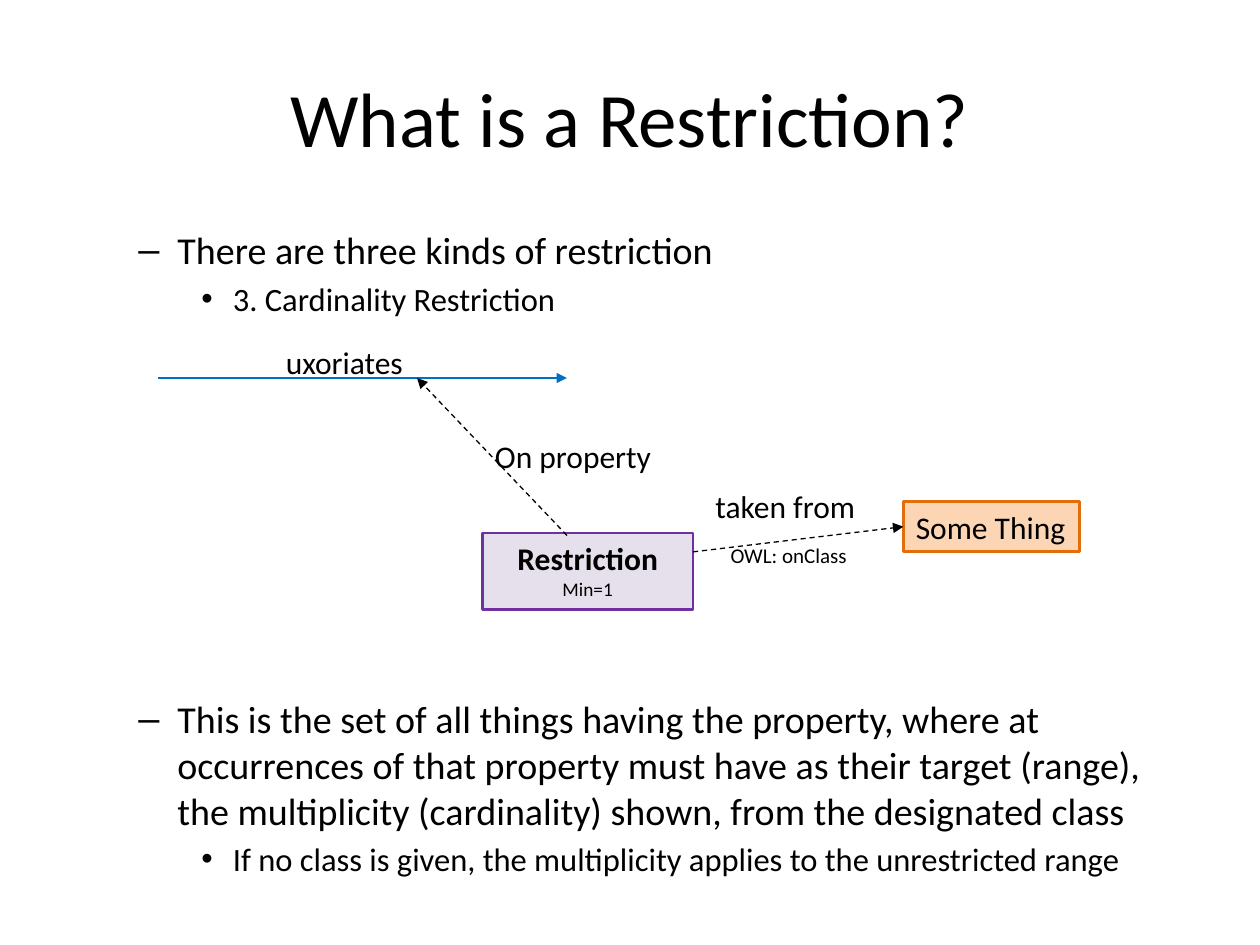
from lxml.etree import SubElement
from pptx import Presentation
from pptx.dml.color import RGBColor
from pptx.enum.dml import MSO_LINE
from pptx.enum.shapes import MSO_CONNECTOR, MSO_SHAPE
from pptx.enum.text import MSO_ANCHOR, MSO_AUTO_SIZE, PP_ALIGN
from pptx.oxml.ns import qn
from pptx.util import Emu, Pt

EMU_PER_PX = 9144


def px(length):
    return Emu(length * EMU_PER_PX)


def color(value):
    return RGBColor.from_string(value)


class SlideBuilder:
    font = "Calibri"
    ink = "000000"

    def __init__(self, presentation):
        self.slide = presentation.slides.add_slide(presentation.slide_layouts[5])

    def add_text(self, paragraph, text, size, bold=False, align=PP_ALIGN.LEFT):
        paragraph.alignment = align
        run = paragraph.add_run()
        run.text = text
        run.font.name = self.font
        run.font.size = Pt(size)
        run.font.bold = bold
        run.font.color.rgb = color(self.ink)

    def title(self, text, box):
        shape = self.slide.shapes.title
        shape.left, shape.top, shape.width, shape.height = map(px, box)
        shape.text_frame.vertical_anchor = MSO_ANCHOR.MIDDLE
        self.add_text(shape.text_frame.paragraphs[0], text, 44, align=PP_ALIGN.CENTER)

    def bullets(self, items, box):
        levels = {1: ("–", 21.7, 81, 31), 2: ("•", 18.6, 125, 25)}
        frame = self.slide.shapes.add_textbox(*map(px, box)).text_frame
        frame.word_wrap = True
        for index, (level, text, space_before) in enumerate(items):
            mark, size, margin, hanging = levels[level]
            paragraph = frame.add_paragraph() if index else frame.paragraphs[0]
            paragraph.level = level
            paragraph.space_before = Pt(space_before)
            properties = paragraph._p.get_or_add_pPr()
            properties.set("marL", str(px(margin)))
            properties.set("indent", str(-px(hanging)))
            SubElement(properties, qn("a:buFont"), typeface="Arial")
            SubElement(properties, qn("a:buChar"), char=mark)
            self.add_text(paragraph, text, size)

    def label(self, text, box, size=18):
        frame = self.slide.shapes.add_textbox(*map(px, box)).text_frame
        frame.word_wrap = False
        frame.auto_size = MSO_AUTO_SIZE.SHAPE_TO_FIT_TEXT
        self.add_text(frame.paragraphs[0], text, size)

    def node(self, lines, box, fill, outline, align=PP_ALIGN.LEFT, wrap=True):
        shape = self.slide.shapes.add_shape(MSO_SHAPE.RECTANGLE, *map(px, box))
        shape.shadow.inherit = False
        shape.fill.solid()
        shape.fill.fore_color.rgb = color(fill)
        shape.line.color.rgb = color(outline)
        shape.line.width = Pt(1.5)
        frame = shape.text_frame
        frame.word_wrap = wrap
        frame.auto_size = MSO_AUTO_SIZE.SHAPE_TO_FIT_TEXT
        frame.vertical_anchor = MSO_ANCHOR.TOP
        for index, (text, size, bold) in enumerate(lines):
            paragraph = frame.add_paragraph() if index else frame.paragraphs[0]
            self.add_text(paragraph, text, size, bold, align)
        return shape

    def arrow(self, start, end, line_color=ink, width=0.75, dashed=True):
        connector = self.slide.shapes.add_connector(
            MSO_CONNECTOR.STRAIGHT, *map(px, start + end))
        connector.line.color.rgb = color(line_color)
        connector.line.width = Pt(width)
        if dashed:
            connector.line.dash_style = MSO_LINE.DASH
        properties = connector._element.spPr
        SubElement(properties.find(qn("a:ln")), qn("a:tailEnd"), type="triangle")
        SubElement(properties, qn("a:effectLst"))
        return connector


def main():
    presentation = Presentation()
    presentation.slide_width, presentation.slide_height = px(1000), px(750)
    builder = SlideBuilder(presentation)

    builder.title("What is a Restriction?", (50, 30, 900, 125))
    builder.bullets([
        (1, "There are three kinds of restriction", 0),
        (2, "3. Cardinality Restriction", 3.7),
        (1, "This is the set of all things having the property, where at "
            "occurrences of that property must have as their target (range), "
            "the multiplicity (cardinality) shown, from the designated class", 216),
        (2, "If no class is given, the multiplicity applies to the "
            "unrestricted range", 3.7),
    ], (50, 175, 900, 495))

    builder.node([("Restriction", 18, True), ("Min=1", 11, False)],
                 (383, 423, 167, 61), "E6E0EC", "7030A0", PP_ALIGN.CENTER)
    some_thing = builder.node([("Some Thing", 18, False)], (717, 398, 140, 40),
                              "FCD5B5", "E46C0A", wrap=False)

    taken_from = builder.arrow((550, 438), (717, 418))
    taken_from.end_connect(some_thing, 1)
    builder.label("taken from", (558, 382, 132, 40))
    builder.label("OWL: onClass", (570, 426, 113, 30), 12)

    builder.arrow((125, 300), (450, 300), "0070C0", 1.5, dashed=False)
    builder.label("uxoriates", (217, 267, 114, 40))
    builder.arrow((450, 425), (331, 300))
    builder.label("On property", (383, 342, 145, 40))

    presentation.save("out.pptx")


if __name__ == "__main__":
    main()
